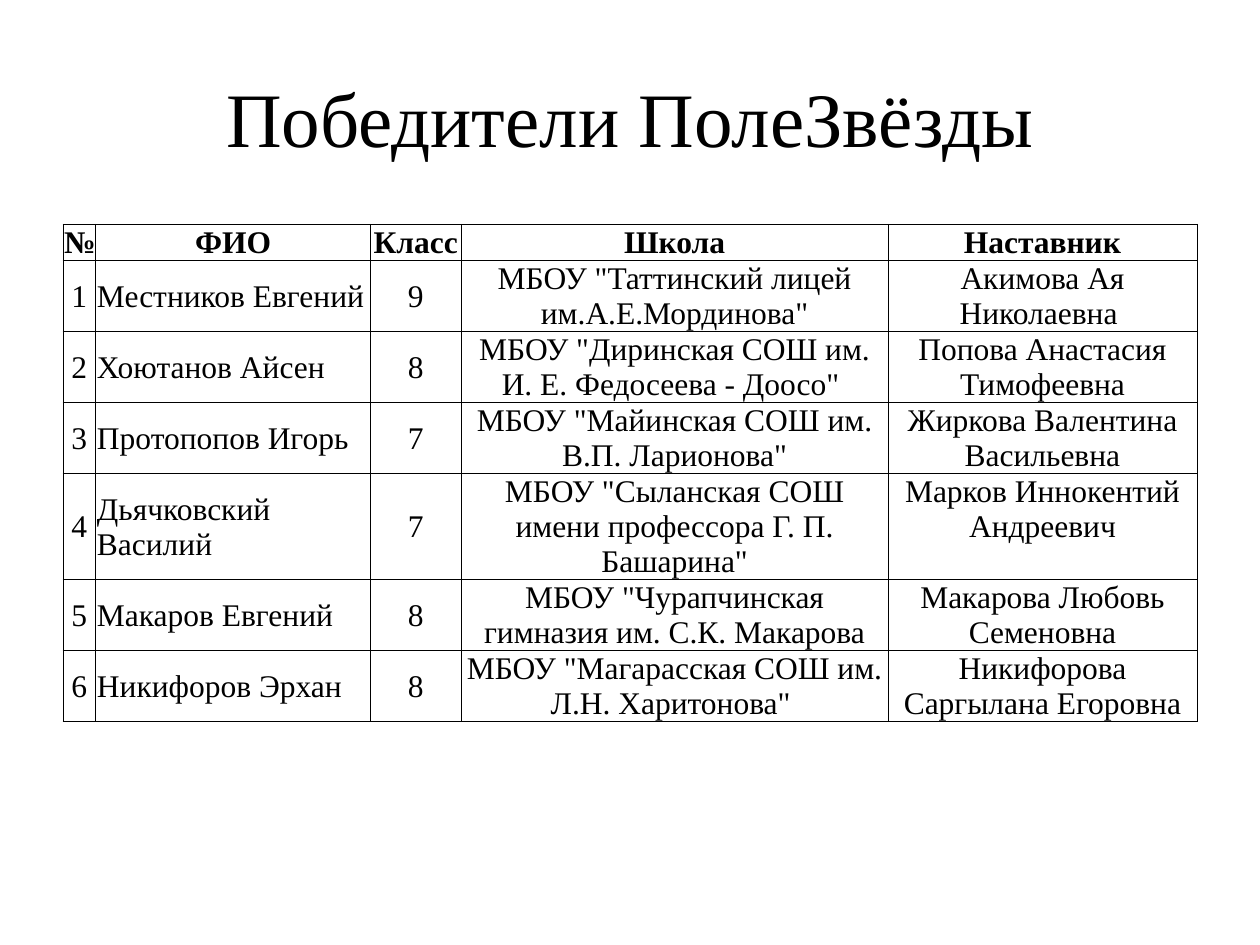
from dataclasses import dataclass
from lxml.etree import SubElement
from pptx import Presentation
from pptx.dml.color import RGBColor as Rgb
from pptx.enum.text import MSO_ANCHOR as Anchor, PP_ALIGN as Align
from pptx.oxml.ns import qn
from pptx.util import Inches, Pt


@dataclass(frozen=True)
class Theme:
    """Colours, font and sizes of the slide."""
    font: str = "Times New Roman"
    ink: str = "000000"
    paper: str = "FFFFFF"
    title_size: float = 44
    table_size: float = 18
    border: float = 0.5
    inset: float = 0.01


THEME = Theme()
TITLE_BOX = (0.5, 0.3, 9, 1.25)
TABLE_BOX = (0.5, 1.78, 9, 4.27)
COLUMNS = (0.26, 2.18, 0.72, 3.39, 2.45)
HEADER_ROW, WINNER_ROW = 0.22, 0.44
NAME_COLUMN, MENTOR_COLUMN = 1, 4
HEADINGS = ("№", "ФИО", "Класс", "Школа", "Наставник")
WINNERS = (
    ("Местников Евгений", 9, 'МБОУ "Таттинский лицей им.А.Е.Мординова"', "Акимова Ая Николаевна "),
    ("Хоютанов Айсен", 8, 'МБОУ "Диринская СОШ им. И. Е. Федосеева - Доосо" ', "Попова Анастасия Тимофеевна"),
    ("Протопопов Игорь", 7, 'МБОУ "Майинская СОШ им. В.П. Ларионова"', "Жиркова Валентина Васильевна"),
    ("Дьячковский Василий", 7, 'МБОУ "Сыланская СОШ имени профессора Г. П. Башарина"', "Марков Иннокентий Андреевич"),
    ("Макаров Евгений", 8, 'МБОУ "Чурапчинская гимназия им. С.К. Макарова', "Макарова Любовь Семеновна"),
    ("Никифоров Эрхан", 8, 'МБОУ "Магарасская СОШ им. Л.Н. Харитонова" ', "Никифорова Саргылана Егоровна"),
)


def style_text(frame, size, align, bold=False):
    """Format the only paragraph of a text frame."""
    paragraph = frame.paragraphs[0]
    paragraph.alignment = align
    font = paragraph.font
    font.name, font.size, font.bold = THEME.font, Pt(size), bold
    font.color.rgb = Rgb.from_string(THEME.ink)


def add_borders(cell):
    """Draw a thin line on all four sides of a cell."""
    properties = cell._tc.get_or_add_tcPr()
    for index, side in enumerate(("lnL", "lnR", "lnT", "lnB")):
        line = properties.makeelement(qn(f"a:{side}"), {"w": str(Pt(THEME.border))})
        fill = SubElement(line, qn("a:solidFill"))
        SubElement(fill, qn("a:srgbClr"), val=THEME.ink)
        properties.insert(index, line)


def fill_cell(cell, value, align, anchor, bold):
    """Write and format one table cell."""
    cell.text = str(value)
    cell.vertical_anchor = anchor
    cell.margin_left = cell.margin_right = cell.margin_top = Inches(THEME.inset)
    cell.margin_bottom = 0
    cell.fill.solid()
    cell.fill.fore_color.rgb = Rgb.from_string(THEME.paper)
    add_borders(cell)
    style_text(cell.text_frame, THEME.table_size, align, bold)


def place_title(slide, box, wording):
    """Put the heading in the title placeholder."""
    title = slide.shapes.title
    title.left, title.top, title.width, title.height = map(Inches, box)
    title.text_frame.text = wording
    title.text_frame.vertical_anchor = Anchor.MIDDLE
    style_text(title.text_frame, THEME.title_size, Align.CENTER)


def place_winners(slide, box, winners):
    """Add the numbered table of winners, schools and mentors."""
    rows = [HEADINGS] + [(number, *winner) for number, winner in enumerate(winners, 1)]
    frame = slide.shapes.add_table(len(rows), len(HEADINGS), *map(Inches, box))
    table = frame.table
    for column, share in zip(table.columns, COLUMNS):
        column.width = Inches(box[2] * share / sum(COLUMNS))
    for r, values in enumerate(rows):
        header = r == 0
        table.rows[r].height = Inches(HEADER_ROW if header else WINNER_ROW)
        for c, value in enumerate(values):
            align = Align.LEFT if c == NAME_COLUMN and not header else Align.CENTER
            anchor = Anchor.TOP if c == MENTOR_COLUMN and not header else Anchor.MIDDLE
            fill_cell(table.cell(r, c), value, align, anchor, header)
    frame.height = Inches(box[3])


def main():
    """Build and save the presentation."""
    deck = Presentation()
    deck.slide_width, deck.slide_height = Inches(10), Inches(7.5)
    slide = deck.slides.add_slide(deck.slide_layouts.get_by_name("Title Only"))
    place_title(slide, TITLE_BOX, "Победители ПолеЗвёзды")
    place_winners(slide, TABLE_BOX, WINNERS)
    deck.save("out.pptx")


if __name__ == "__main__":
    main()
